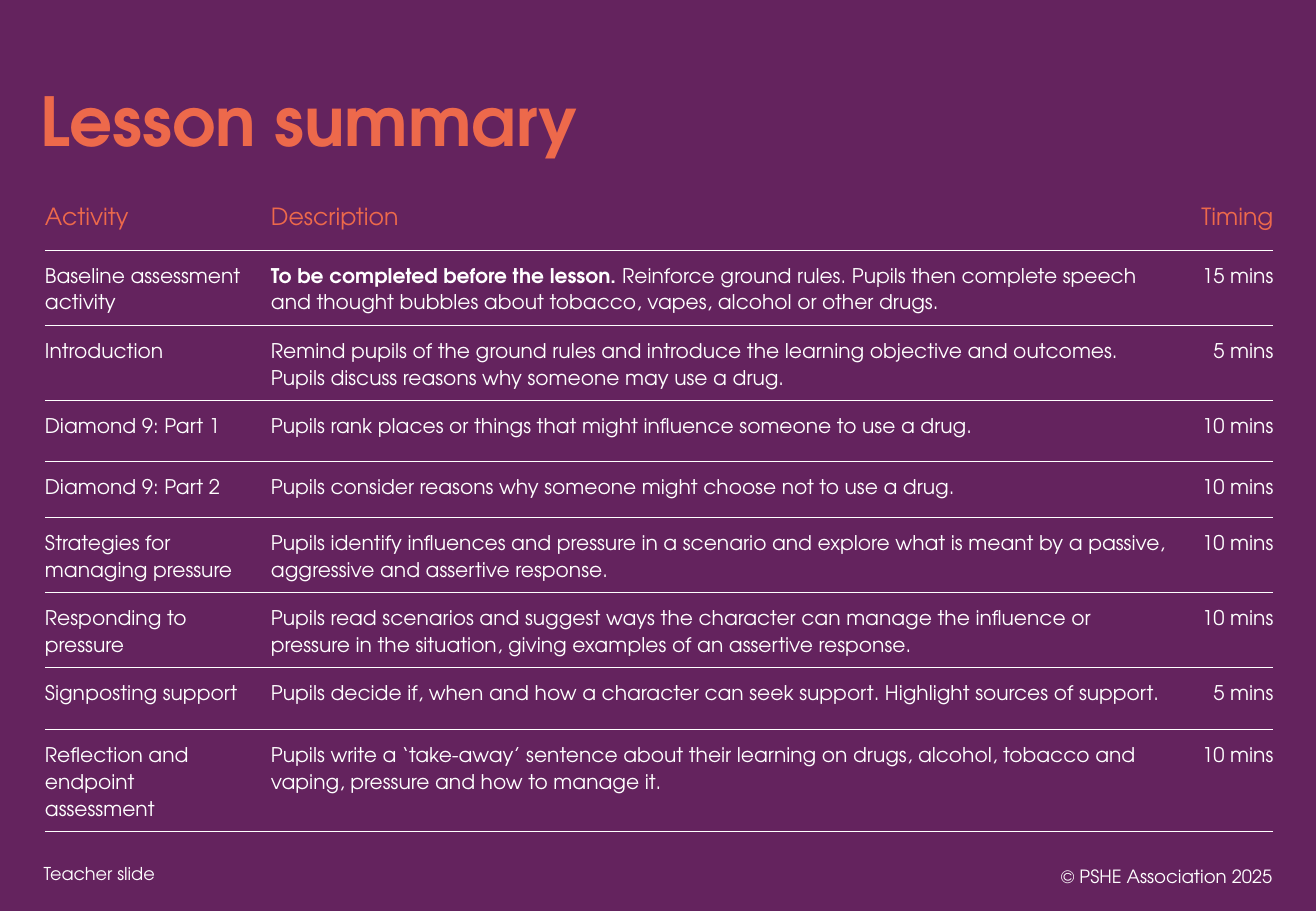
"""Build the lesson summary slide with its table of activities."""
from dataclasses import dataclass

from lxml.etree import SubElement
from pptx import Presentation
from pptx.dml.color import RGBColor
from pptx.enum.text import MSO_ANCHOR, PP_ALIGN
from pptx.oxml import parse_xml
from pptx.oxml.ns import nsdecls, qn
from pptx.util import Inches, Pt

PURPLE = RGBColor(0x64, 0x23, 0x5E)
ORANGE = RGBColor(0xED, 0x69, 0x4B)
WHITE = RGBColor(0xFF, 0xFF, 0xFF)
FONT = "TeX Gyre Adventor"
PLAIN_TABLE_STYLE = "{2D5ABB26-0587-4C30-8999-92F81FD0307C}"


@dataclass
class Activity:
    name: str
    description: str
    minutes: int
    height: float
    lead: str = ""


@dataclass
class Column:
    heading: str
    width: float
    left: float
    right: float
    align: PP_ALIGN = PP_ALIGN.LEFT


@dataclass
class Label:
    text: str
    place: tuple[float, float, float, float]
    size: float
    align: PP_ALIGN
    anchor: MSO_ANCHOR


COLUMNS = [
    Column("Activity", 1.7, 0, 0.08),
    Column("Description", 7.61, 0.16, 0.08),
    Column("Timing", 0.8, 0.08, 0, PP_ALIGN.RIGHT),
]
HEADING_HEIGHT = 0.52
ACTIVITIES = [
    Activity("Baseline assessment activity",
             " Reinforce ground rules. Pupils then complete speech and thought bubbles "
             "about tobacco, vapes, alcohol or other drugs.",
             15, 0.62, "To be completed before the lesson."),
    Activity("Introduction",
             "Remind pupils of the ground rules and introduce the learning objective "
             "and outcomes. Pupils discuss reasons why someone may use a drug.", 5, 0.62),
    Activity("Diamond 9: Part 1",
             "Pupils rank places or things that might influence someone to use a drug.",
             10, 0.5),
    Activity("Diamond 9: Part 2",
             "Pupils consider reasons why someone might choose not to use a drug.",
             10, 0.46),
    Activity("Strategies for managing pressure",
             "Pupils identify influences and pressure in a scenario and explore what is "
             "meant by a passive, aggressive and assertive response.", 10, 0.62),
    Activity("Responding to pressure",
             "Pupils read scenarios and suggest ways the character can manage the "
             "influence or pressure in the situation, giving examples of an assertive "
             "response.", 10, 0.62),
    Activity("Signposting support",
             "Pupils decide if, when and how a character can seek support. Highlight "
             "sources of support.", 5, 0.51),
    Activity("Reflection and endpoint assessment",
             "Pupils write a ‘take-away’ sentence about their learning on drugs, "
             "alcohol, tobacco and vaping, pressure and how to manage it.", 10, 0.84),
]
LABELS = [
    Label("Teacher slide", (0.26, 7.05, 6.78, 0.29), 10.5, PP_ALIGN.LEFT, MSO_ANCHOR.TOP),
    Label("© PSHE Association 2025", (8.13, 7.01, 2.44, 0.4), 10.8, PP_ALIGN.RIGHT,
          MSO_ANCHOR.MIDDLE),
]


def apply(target, values: dict) -> None:
    """Set each named attribute of the target."""
    for name, value in values.items():
        setattr(target, name, value)


def add_span(para, text: str, size: float, colour: RGBColor, bold: bool = False) -> None:
    """Add one formatted run of text."""
    span = para.add_run()
    span.text = text
    apply(span.font, {"name": FONT, "size": Pt(size), "bold": bold})
    span.font.color.rgb = colour


def add_label(page, label: Label) -> None:
    """Add a small line of white text at the foot of the page."""
    box = page.shapes.add_textbox(*map(Inches, label.place))
    apply(box.text_frame, {"word_wrap": True, "vertical_anchor": label.anchor})
    para = box.text_frame.paragraphs[0]
    para.alignment = label.align
    add_span(para, label.text, label.size, WHITE)


def add_title(page, text: str) -> None:
    """Place and format the title."""
    title = page.shapes.title
    apply(title, dict(zip(("left", "top", "width", "height"),
                          map(Inches, (0.23, 0.65, 8.2, 0.76)))))
    title.text_frame.vertical_anchor = MSO_ANCHOR.MIDDLE
    para = title.text_frame.paragraphs[0]
    apply(para, {"alignment": PP_ALIGN.LEFT, "line_spacing": 0.9})
    add_span(para, text, 40, ORANGE, True)


def format_cell(cell, column: Column) -> None:
    """Give a cell its margins, clear fill and white rule below."""
    apply(cell, {"margin_left": Inches(column.left), "margin_right": Inches(column.right),
                 "margin_top": Inches(0.08), "margin_bottom": Inches(0.08)})
    cell.fill.background()
    rule = parse_xml(f'<a:lnB {nsdecls("a")} w="{Pt(0.5)}"/>')
    fill = SubElement(rule, qn("a:solidFill"))
    SubElement(fill, qn("a:srgbClr"), val=str(WHITE))
    cell._tc.get_or_add_tcPr().insert(0, rule)
    cell.text_frame.paragraphs[0].alignment = column.align


def add_activities(page) -> None:
    """Add the table of activities."""
    heights = [HEADING_HEIGHT] + [activity.height for activity in ACTIVITIES]
    widths = [column.width for column in COLUMNS]
    table = page.shapes.add_table(
        len(heights), len(widths), Inches(0.37), Inches(1.54),
        Inches(sum(widths)), Inches(sum(heights))).table
    apply(table, {"first_row": False, "horz_banding": False})
    table._tbl.tblPr.find(qn("a:tableStyleId")).text = PLAIN_TABLE_STYLE
    for row, height in zip(table.rows, heights):
        row.height = Inches(height)
    for index, column in enumerate(COLUMNS):
        table.columns[index].width = Inches(column.width)
        for row_index in range(len(heights)):
            format_cell(table.cell(row_index, index), column)
        heading = table.cell(0, index)
        heading.vertical_anchor = MSO_ANCHOR.MIDDLE
        add_span(heading.text_frame.paragraphs[0], column.heading, 14, ORANGE)
    for row_index, activity in enumerate(ACTIVITIES, 1):
        texts = (activity.name, activity.description, f"{activity.minutes} mins")
        for index, text in enumerate(texts):
            para = table.cell(row_index, index).text_frame.paragraphs[0]
            para.line_spacing = Pt(16)
            if index == 1 and activity.lead:
                add_span(para, activity.lead, 12, WHITE, True)
            add_span(para, text, 12, WHITE)


def main() -> None:
    """Build and save the deck."""
    deck = Presentation()
    apply(deck, {"slide_width": Inches(10.83), "slide_height": Inches(7.5)})
    page = deck.slides.add_slide(deck.slide_layouts[5])
    page.background.fill.solid()
    page.background.fill.fore_color.rgb = PURPLE
    add_title(page, "Lesson summary")
    add_activities(page)
    for label in LABELS:
        add_label(page, label)
    deck.save("out.pptx")


if __name__ == "__main__":
    main()
